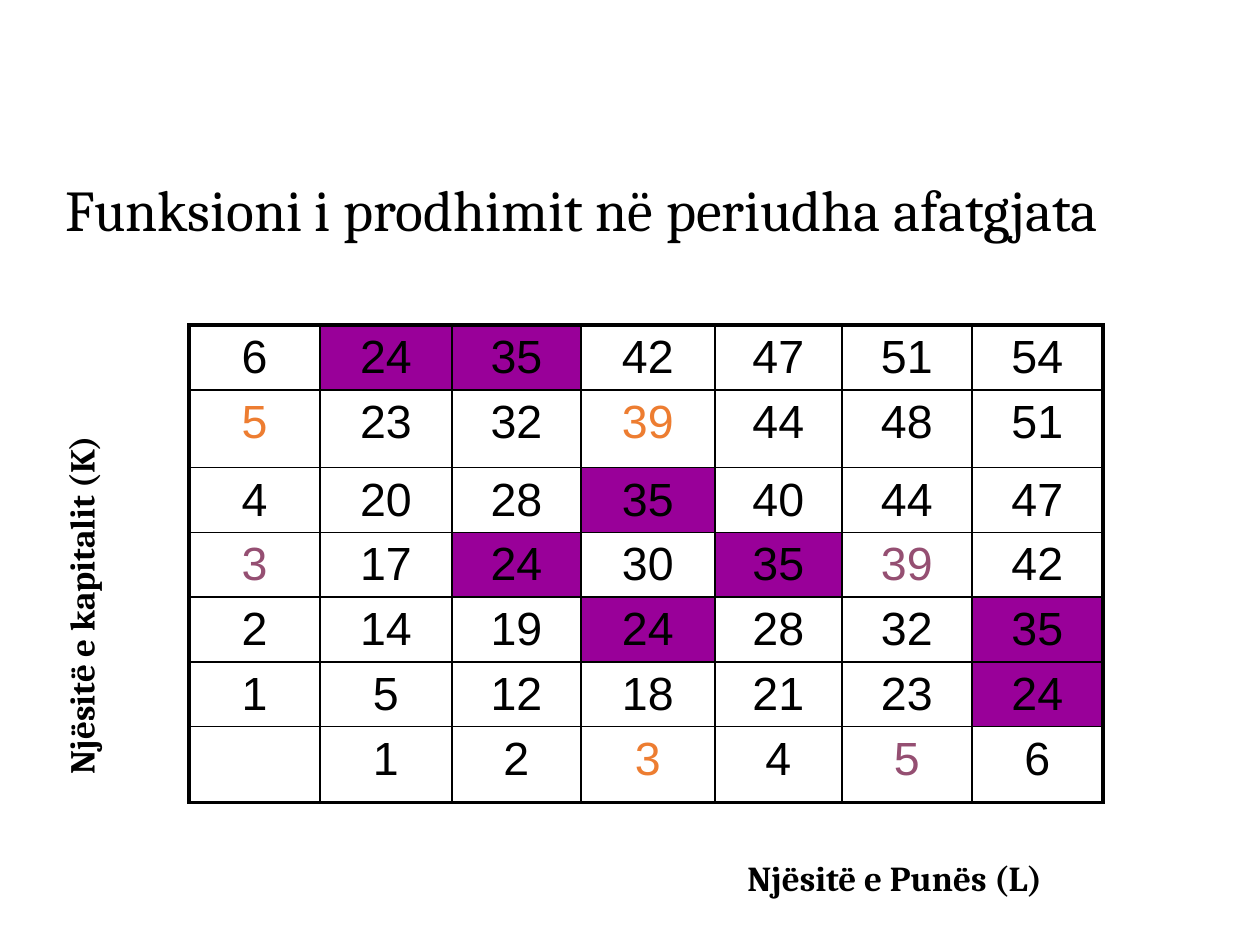
import dataclasses

import lxml.etree
import pptx
import pptx.dml.color
import pptx.enum.text
import pptx.oxml.ns
import pptx.util

EMU_PER_PX = 914400 / 126
BLACK, WHITE, PURPLE = "000000", "FFFFFF", "990099"
ORANGE, PLUM = "ED7D31", "954F72"

OUTPUT = (
    ("6", "24", "35", "42", "47", "51", "54"),
    ("5", "23", "32", "39", "44", "48", "51"),
    ("4", "20", "28", "35", "40", "44", "47"),
    ("3", "17", "24", "30", "35", "39", "42"),
    ("2", "14", "19", "24", "28", "32", "35"),
    ("1", "5", "12", "18", "21", "23", "24"),
    ("", "1", "2", "3", "4", "5", "6"),
)
ISOQUANT_LEVELS = ("24", "35")
ACCENTS = {
    (1, 0): ORANGE, (1, 3): ORANGE, (6, 3): ORANGE,
    (3, 0): PLUM, (3, 5): PLUM, (6, 5): PLUM,
}
COLUMN_WIDTHS = (131, 132, 129, 134, 127, 130, 131)
ROW_HEIGHTS = (52, 78, 52, 52, 52, 52, 76)


@dataclasses.dataclass(frozen=True)
class AxisLabel:
    wording: str
    left: int
    top: int
    width: int
    height: int
    rotation: int = 0


AXIS_LABELS = (
    AxisLabel("Njësitë e kapitalit (K)", -130, 549, 421, 54, 270),
    AxisLabel("Njësitë e Punës (L)", 735, 850, 346, 54),
)


def px(length: int) -> int:
    return pptx.util.Emu(round(length * EMU_PER_PX))


def colour(value: str) -> pptx.dml.color.RGBColor:
    return pptx.dml.color.RGBColor.from_string(value)


def add_run(paragraph, wording: str, font: str, size: float,
            ink: str = BLACK, bold: bool = False) -> None:
    run = paragraph.add_run()
    run.text = wording
    run.font.name = font
    run.font.size = pptx.util.Pt(size)
    run.font.bold = bold
    run.font.color.rgb = colour(ink)


def set_borders(cell, widths: dict[str, float]) -> None:
    qn = pptx.oxml.ns.qn
    properties = cell._tc.get_or_add_tcPr()
    for order, (side, width) in enumerate(widths.items()):
        line = lxml.etree.Element(qn(f"a:ln{side}"), w=str(pptx.util.Pt(width)))
        fill = lxml.etree.SubElement(line, qn("a:solidFill"))
        lxml.etree.SubElement(fill, qn("a:srgbClr"), val=str(colour(BLACK)))
        properties.insert(order, line)


def add_title(slide, wording: str) -> None:
    title = slide.shapes.title
    title.left, title.top, title.width, title.height = map(px, (53, 81, 1086, 263))
    frame = title.text_frame
    frame.auto_size = pptx.enum.text.MSO_AUTO_SIZE.NONE
    frame.vertical_anchor = pptx.enum.text.MSO_ANCHOR.MIDDLE
    paragraph = frame.paragraphs[0]
    paragraph.alignment = pptx.enum.text.PP_ALIGN.LEFT
    paragraph.line_spacing = 0.9
    add_run(paragraph, wording, "Cambria", 33)


def add_output_table(slide) -> None:
    last_row, last_column = len(OUTPUT) - 1, len(COLUMN_WIDTHS) - 1
    table = slide.shapes.add_table(
        len(OUTPUT), len(COLUMN_WIDTHS), px(189), px(325),
        px(sum(COLUMN_WIDTHS)), px(sum(ROW_HEIGHTS)),
    ).table
    table.first_row = False
    table.horz_banding = False
    for column, width in zip(table.columns, COLUMN_WIDTHS):
        column.width = px(width)
    for row, height in zip(table.rows, ROW_HEIGHTS):
        row.height = px(height)
    for r, quantities in enumerate(OUTPUT):
        for c, quantity in enumerate(quantities):
            cell = table.cell(r, c)
            cell.fill.solid()
            cell.fill.fore_color.rgb = colour(
                PURPLE if quantity in ISOQUANT_LEVELS else WHITE)
            outer = {"L": c == 0, "R": c == last_column,
                     "T": r == 0, "B": r == last_row}
            set_borders(cell, {side: 2.25 if edge else 1
                               for side, edge in outer.items()})
            if quantity:
                paragraph = cell.text_frame.paragraphs[0]
                paragraph.alignment = pptx.enum.text.PP_ALIGN.CENTER
                add_run(paragraph, quantity, "Arial", 26.6,
                        ACCENTS.get((r, c), BLACK))


def add_axis_label(slide, label: AxisLabel) -> None:
    box = slide.shapes.add_textbox(
        px(label.left), px(label.top), px(label.width), px(label.height))
    box.rotation = label.rotation
    box.text_frame.word_wrap = True
    box.text_frame.auto_size = pptx.enum.text.MSO_AUTO_SIZE.SHAPE_TO_FIT_TEXT
    add_run(box.text_frame.paragraphs[0], label.wording, "Cambria", 20, bold=True)


def main() -> None:
    presentation = pptx.Presentation()
    presentation.slide_width, presentation.slide_height = px(1260), px(945)
    slide = presentation.slides.add_slide(presentation.slide_layouts[5])
    add_title(slide, "Funksioni i prodhimit në periudha afatgjata")
    add_output_table(slide)
    for label in AXIS_LABELS:
        add_axis_label(slide, label)
    presentation.save("out.pptx")


if __name__ == "__main__":
    main()
